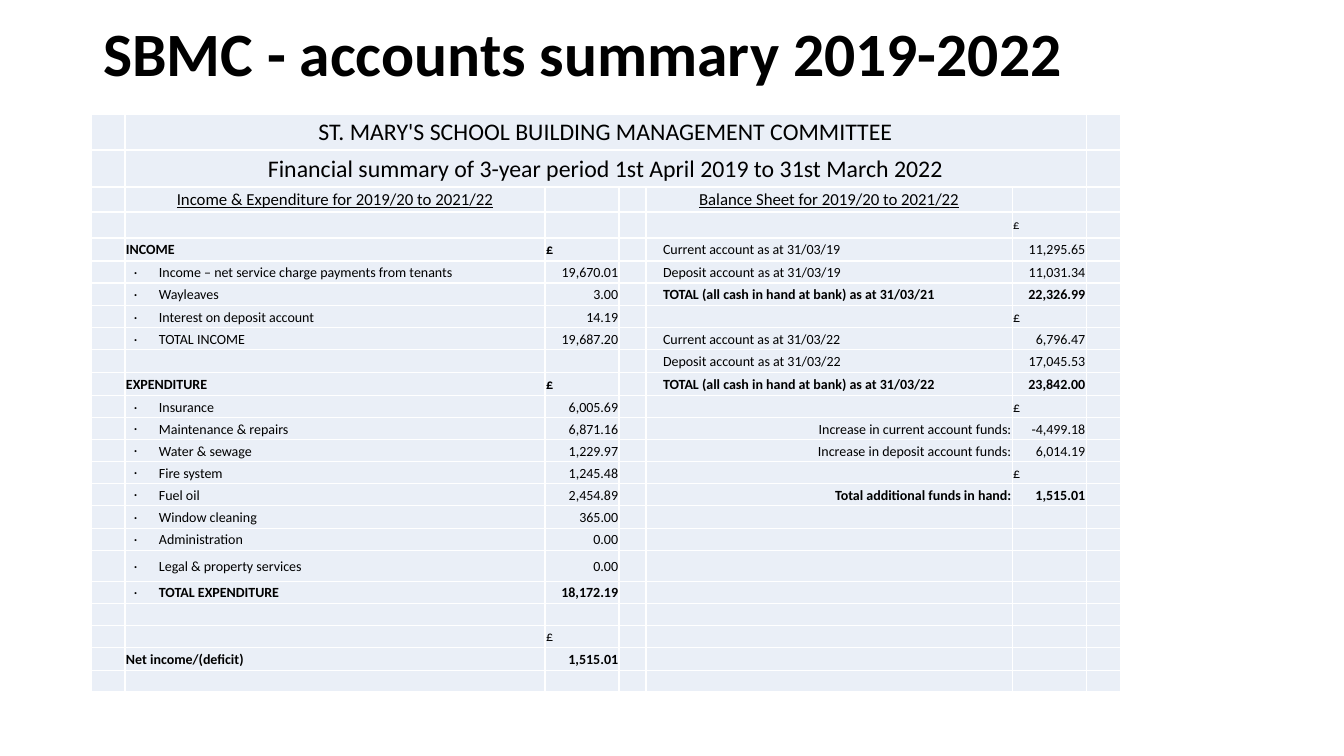
from lxml import etree
from pptx import Presentation
from pptx.dml.color import RGBColor
from pptx.enum.text import MSO_ANCHOR, MSO_AUTO_SIZE, PP_ALIGN
from pptx.oxml.ns import qn
from pptx.util import Inches, Pt

LEFT, CENTER, RIGHT = PP_ALIGN.LEFT, PP_ALIGN.CENTER, PP_ALIGN.RIGHT
MIDDLE = MSO_ANCHOR.MIDDLE
FONT = "Calibri"
COLOURS = {"text": "000000", "cell": "EAEFF7"}
PX = 914400 / 100.8

COLUMN_WIDTHS = [34, 420, 74, 27, 366, 74, 34]
ROW_HEIGHTS = [36, 37, 25, 26, 23, 22, 23, 22, 22, 23, 23, 22,
               22, 22, 22, 22, 23, 22, 31, 22, 22, 22, 23, 21]
BANNERS = [
    "ST. MARY'S SCHOOL BUILDING MANAGEMENT COMMITTEE",
    "Financial summary of 3-year period 1st April 2019 to 31st March 2022",
]
SUBHEADINGS = {1: "Income & Expenditure for 2019/20 to 2021/22",
               4: "Balance Sheet for 2019/20 to 2021/22"}
FIRST_ACCOUNT_ROW = 3
# Income and expenditure label and amount, then balance sheet label and amount
ACCOUNTS = [
    ("", "", "", "£"),
    ("INCOME", "£", "Current account as at 31/03/19", "11,295.65"),
    ("Income – net service charge payments from tenants", "19,670.01",
     "Deposit account as at 31/03/19", "11,031.34"),
    ("Wayleaves", "3.00", "TOTAL (all cash in hand at bank) as at 31/03/21", "22,326.99"),
    ("Interest on deposit account", "14.19", "", "£"),
    ("TOTAL INCOME", "19,687.20", "Current account as at 31/03/22", "6,796.47"),
    ("", "", "Deposit account as at 31/03/22", "17,045.53"),
    ("EXPENDITURE", "£", "TOTAL (all cash in hand at bank) as at 31/03/22", "23,842.00"),
    ("Insurance", "6,005.69", "", "£"),
    ("Maintenance & repairs", "6,871.16", "Increase in current account funds:", "-4,499.18"),
    ("Water & sewage", "1,229.97", "Increase in deposit account funds:", "6,014.19"),
    ("Fire system", "1,245.48", "", "£"),
    ("Fuel oil", "2,454.89", "Total additional funds in hand:", "1,515.01"),
    ("Window cleaning", "365.00", "", ""),
    ("Administration", "0.00", "", ""),
    ("Legal & property services", "0.00", "", ""),
    ("TOTAL EXPENDITURE", "18,172.19", "", ""),
    ("", "", "", ""),
    ("", "£", "", ""),
    ("Net income/(deficit)", "1,515.01", "", ""),
]
LEFT_HEADINGS = ("INCOME", "EXPENDITURE", "Net income/(deficit)")
BOLD_STARTS = LEFT_HEADINGS + ("TOTAL EXPENDITURE", "TOTAL (all", "Total additional")


def px(length):
    return round(length * PX)


def write(cell, text, size=10, align=LEFT, bold=False, underline=False, inset=1, bullet=False):
    cell.margin_left = px(inset)
    paragraph = cell.text_frame.paragraphs[0]
    paragraph.text = text
    paragraph.alignment = align
    font = paragraph.runs[0].font
    font.name, font.size = FONT, Pt(size)
    font.bold, font.underline = bold, underline
    font.color.rgb = RGBColor.from_string(COLOURS["text"])
    if bullet:
        properties = paragraph._p.get_or_add_pPr()
        properties.set("marL", str(px(25)))
        properties.set("indent", str(-px(25)))
        etree.SubElement(properties, qn("a:buFont"), typeface=FONT)
        etree.SubElement(properties, qn("a:buChar"), char="·")


presentation = Presentation()
presentation.slide_width, presentation.slide_height = Inches(13.33), Inches(7.5)
slide = presentation.slides.add_slide(presentation.slide_layouts[5])

title = slide.shapes.title
title.left, title.top, title.width, title.height = px(93), px(11), px(1157), px(92)
title_frame = title.text_frame
title_frame.text = "SBMC - accounts summary 2019-2022"
title_frame.auto_size = MSO_AUTO_SIZE.NONE
title_frame.vertical_anchor = MIDDLE
title_paragraph = title_frame.paragraphs[0]
title_paragraph.alignment = LEFT
title_paragraph.line_spacing = 0.9
title_font = title_paragraph.runs[0].font
title_font.name, title_font.size, title_font.bold = FONT, Pt(44), True
title_font.color.rgb = RGBColor.from_string(COLOURS["text"])

table = slide.shapes.add_table(
    len(ROW_HEIGHTS), len(COLUMN_WIDTHS), px(91), px(114),
    px(sum(COLUMN_WIDTHS)), px(sum(ROW_HEIGHTS))).table
table.first_row = table.horz_banding = False
for column, width in zip(table.columns, COLUMN_WIDTHS):
    column.width = px(width)
for row, height in zip(table.rows, ROW_HEIGHTS):
    row.height = px(height)

for cell in table.iter_cells():
    cell.fill.solid()
    cell.fill.fore_color.rgb = RGBColor.from_string(COLOURS["cell"])
    cell.vertical_anchor = MIDDLE
    cell.margin_left = cell.margin_top = cell.margin_right = px(1)
    cell.margin_bottom = 0
    # Keeps empty cells from stretching their row
    etree.SubElement(cell.text_frame.paragraphs[0]._p, qn("a:endParaRPr"), sz="1000")

for row_index, banner in enumerate(BANNERS):
    table.cell(row_index, 1).merge(table.cell(row_index, 5))
    write(table.cell(row_index, 1), banner, 17, CENTER)
for column_index, subheading in SUBHEADINGS.items():
    write(table.cell(2, column_index), subheading, 12, CENTER, underline=True)

for row_index, account in enumerate(ACCOUNTS, FIRST_ACCOUNT_ROW):
    for column_index, label, amount in ((1, *account[:2]), (4, *account[2:])):
        bold = label.startswith(BOLD_STARTS) and not label.startswith("Income")
        if label:
            label_cell = table.cell(row_index, column_index)
            if column_index == 1:
                bullet = label not in LEFT_HEADINGS
                write(label_cell, label, bold=bold, inset=9 if bullet else 1, bullet=bullet)
            elif label.endswith(":"):
                write(label_cell, label, align=RIGHT, bold=bold)
            else:
                write(label_cell, label, bold=bold, inset=17)
        if amount:
            write(table.cell(row_index, column_index + 1), amount,
                  size=9 if row_index == FIRST_ACCOUNT_ROW else 10,
                  align=LEFT if amount == "£" else RIGHT, bold=bold)

presentation.save("out.pptx")
